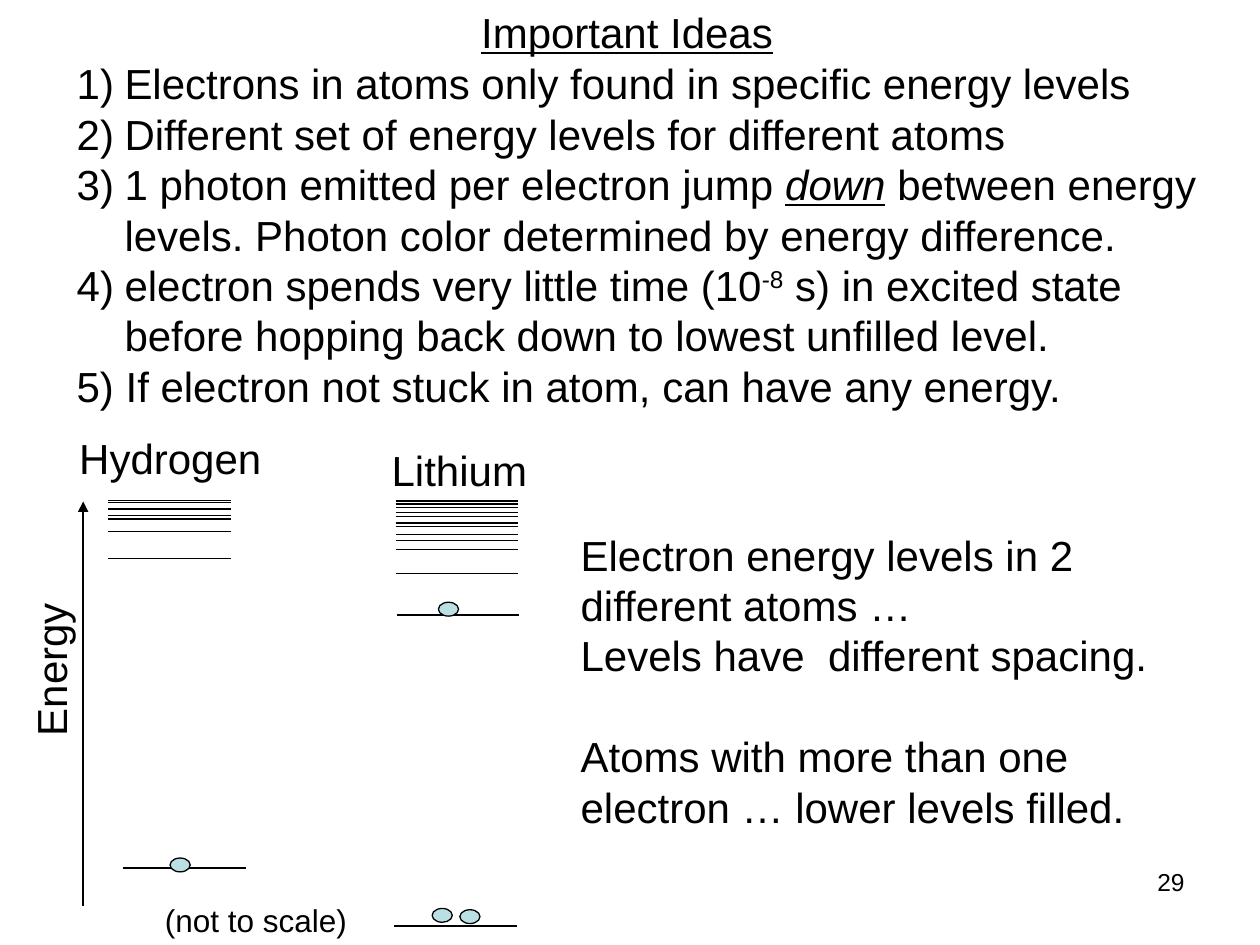
from pptx import Presentation
from pptx import util as u
from pptx.dml.color import RGBColor
from pptx.enum import shapes, text
from pptx.oxml.ns import qn
from lxml import etree

BLACK = RGBColor(0x00, 0x00, 0x00)
WHITE = RGBColor(0xFF, 0xFF, 0xFF)
TEAL = RGBColor(0xBB, 0xE0, 0xE3)
THIN = u.Pt(0.75)
SPAN = 0.97  # width of an energy level

# Left edge and height of each level
HYDRO = [(0.98, 6.89)] + [
    (0.86, y) for y in (4.43, 4.22, 4.12, 4.09, 4.04, 3.99, 3.97)]
LITH = [(3.13, 7.35), (3.15, 4.88)] + [
    (3.14, y) for y in (4.55, 4.36, 4.29, 4.24, 4.18, 4.15, 4.1,
                        4.07, 4.03, 4, 3.98, 3.97)]
DOTS = [(1.35, 6.81), (3.43, 7.21), (3.65, 7.22), (3.48, 4.78)]

# Each idea is a list of (words, style) runs
IDEAS = [
    [("Electrons in atoms only found in specific energy levels", "")],
    [("Different set of energy levels for different atoms", "")],
    [("1 photon emitted per electron jump ", ""), ("down", "stress"),
     (" between energy levels. Photon color determined by energy difference.", "")],
    [("electron spends very little time (10", ""), ("-8", "super"),
     (" s) in excited state before hopping back down to lowest unfilled level.", "")],
    [("5) If electron not stuck in atom, can have any energy.", "")],
]
NOTES = [
    "Electron energy levels in 2 different atoms …",
    "Levels have  different spacing.",
    "Atoms with more than one electron … lower levels filled.",
]


def add_run(para, words, size=24, style=""):
    run = para.add_run()
    run.text = words
    font = run.font
    font.name, font.size = "Arial", u.Pt(size)
    font.color.rgb = BLACK
    if style in ("under", "stress"):
        font.underline = True
    if style == "stress":
        font.italic = True
    if style == "super":
        run._r.get_or_add_rPr().set("baseline", "30000")


def add_box(slide, left, top, width, height, wrap=False):
    box = slide.shapes.add_textbox(*map(u.Inches, (left, top, width, height)))
    box.text_frame.word_wrap = wrap
    return box


def add_label(slide, words, place, size=24, style="", turn=0):
    box = add_box(slide, *place)
    box.rotation = turn
    para = box.text_frame.paragraphs[0]
    add_run(para, words, size, style)
    return para


def add_paras(frame, count):
    return [frame.paragraphs[0]] + [frame.add_paragraph() for _ in range(count - 1)]


def add_line(slide, x1, y1, x2, y2, arrow=False):
    line = slide.shapes.add_connector(
        shapes.MSO_CONNECTOR.STRAIGHT, *map(u.Inches, (x1, y1, x2, y2)))
    line.line.color.rgb = BLACK
    line.line.width = THIN
    if arrow:
        tip = etree.SubElement(line.line._get_or_add_ln(), qn("a:tailEnd"))
        tip.set("type", "triangle")
    etree.SubElement(line._element.spPr, qn("a:effectLst"))


def add_dot(slide, left, top):
    dot = slide.shapes.add_shape(
        shapes.MSO_SHAPE.OVAL, *map(u.Inches, (left, top, 0.16, 0.11)))
    dot.shadow.inherit = False
    dot.fill.solid()
    dot.fill.fore_color.rgb = TEAL
    dot.line.color.rgb = BLACK
    dot.line.width = THIN


def add_ideas(slide):
    frame = add_box(slide, 0.51, 0.41, 9.49, 2.9, wrap=True).text_frame
    for para, idea in zip(add_paras(frame, len(IDEAS)), IDEAS):
        props = para._p.get_or_add_pPr()
        props.set("marL", str(u.Inches(0.38)))
        props.set("indent", str(u.Inches(-0.38)))
        # The last idea carries its number in its text
        if idea is not IDEAS[-1]:
            mark = etree.SubElement(props, qn("a:buAutoNum"))
            mark.set("type", "arabicParenR")
        for words, style in idea:
            add_run(para, words, style=style)


def add_notes(slide):
    frame = add_box(slide, 4.51, 4.15, 4.98, 2.5, wrap=True).text_frame
    paras = add_paras(frame, len(NOTES))
    for para, words in zip(paras, NOTES):
        add_run(para, words)
    paras[-1].space_before = u.Pt(28.8)


def main():
    deck = Presentation()
    deck.slide_width, deck.slide_height = u.Inches(10), u.Inches(7.5)
    slide = deck.slides.add_slide(deck.slide_layouts[6])
    slide.background.fill.solid()
    slide.background.fill.fore_color.rgb = WHITE

    # Title and page number
    add_label(slide, "Important Ideas", (3.72, 0, 2.52, 0.5), style="under")
    page = add_label(slide, "29", (7.17, 6.83, 2.33, 0.52), size=14)
    page.alignment = text.PP_ALIGN.RIGHT
    slide.shapes[-1].text_frame.word_wrap = True

    # Energy axis
    add_line(slide, 0.66, 7.19, 0.66, 3.98, arrow=True)
    add_label(slide, "Energy", (-0.23, 5.06, 1.26, 0.5), turn=270)

    # Energy levels, with electrons on top
    for left, top in HYDRO + LITH:
        add_line(slide, left, top, left + SPAN, top)
    for left, top in DOTS:
        add_dot(slide, left, top)
    add_label(slide, "Hydrogen", (0.53, 3.38, 1.65, 0.5))
    add_label(slide, "Lithium", (3.01, 3.48, 1.28, 0.5))
    add_label(slide, "(not to scale)", (1.21, 7.1, 1.65, 0.4), size=18)

    # Main texts
    add_notes(slide)
    add_ideas(slide)
    deck.save("out.pptx")


if __name__ == "__main__":
    main()
